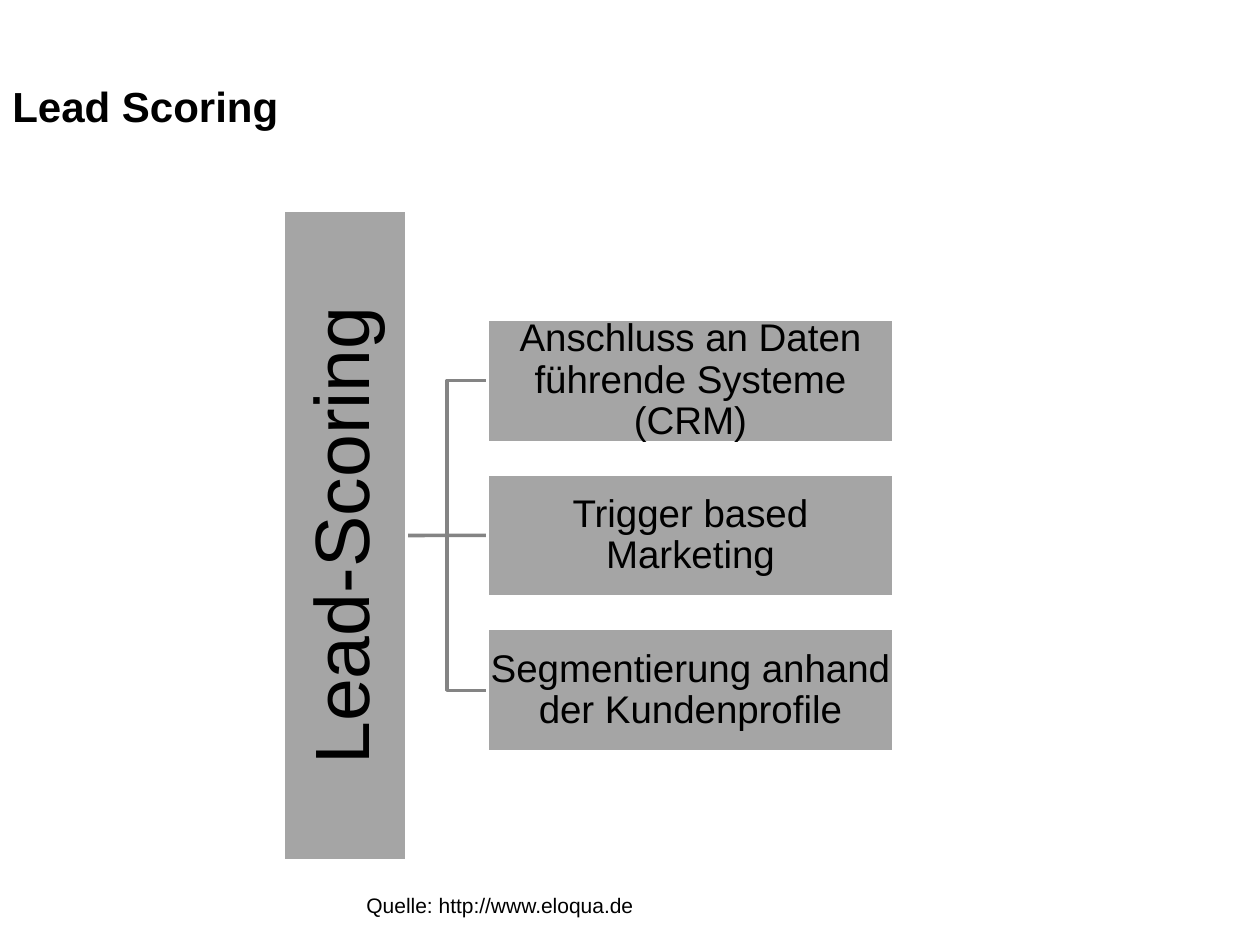
"""Build the Lead Scoring slide: a vertical root bar branching to three boxes."""
from lxml.etree import SubElement
from pptx import Presentation
from pptx.dml.color import RGBColor
from pptx.enum.shapes import MSO_CONNECTOR, MSO_SHAPE
from pptx.enum.text import MSO_ANCHOR, MSO_AUTO_SIZE, PP_ALIGN
from pptx.oxml.ns import qn
from pptx.util import Pt


def color(value):
    return RGBColor.from_string(value)


def write(shape, text, size, frame_format, paragraph_format, bold=False):
    frame = shape.text_frame
    for name, value in frame_format.items():
        setattr(frame, name, value)
    paragraph = frame.paragraphs[0]
    paragraph.text = text
    for name, value in paragraph_format.items():
        setattr(paragraph, name, value)
    for name, value in {"name": "Arial", "size": Pt(size), "bold": bold}.items():
        setattr(paragraph.font, name, value)
    paragraph.font.color.rgb = color("000000")


presentation = Presentation()
presentation.slide_width, presentation.slide_height = Pt(720), Pt(540)
slide = presentation.slides.add_slide(presentation.slide_layouts[6])
shapes = slide.shapes

title = shapes.add_textbox(Pt(0), Pt(42.5), Pt(490), Pt(36))
write(title, "Lead Scoring", 24, {
    "word_wrap": True,
    "auto_size": MSO_AUTO_SIZE.SHAPE_TO_FIT_TEXT,
    "vertical_anchor": MSO_ANCHOR.MIDDLE,
}, {}, bold=True)

source = shapes.add_textbox(Pt(202.3), Pt(506.2), Pt(168.5), Pt(21.8))
write(source, "Quelle: http://www.eloqua.de", 12, {
    "word_wrap": False,
    "auto_size": MSO_AUTO_SIZE.SHAPE_TO_FIT_TEXT,
}, {})

middle, pitch, thickness = 306, 88.5, 70.6
root_length, root_center = 372, 197
root_right = root_center + thickness / 2
branch_left, branch_width = 278.6, 232
elbow = (root_right + branch_left) / 2
branches = [
    "Anschluss an Daten führende Systeme (CRM)",
    "Trigger based Marketing",
    "Segmentierung anhand der Kundenprofile",
]

lines = []
for offset in (pitch, -pitch):
    builder = shapes.build_freeform(Pt(root_right), Pt(middle))
    builder.add_line_segments([
        (Pt(elbow), Pt(middle)),
        (Pt(elbow), Pt(middle + offset)),
        (Pt(branch_left), Pt(middle + offset)),
    ], close=False)
    bracket = builder.convert_to_shape()
    bracket.shadow.inherit = False
    bracket.fill.background()
    lines.append(bracket)

connector = shapes.add_connector(
    MSO_CONNECTOR.STRAIGHT, Pt(root_right), Pt(middle), Pt(branch_left), Pt(middle))
SubElement(connector._element.spPr, qn("a:effectLst"))
lines.append(connector)
for line_shape in lines:
    line_shape.line.color.rgb = color("848484")
    line_shape.line.width = Pt(2)

boxes = [("Lead-Scoring", 44, root_center, middle, root_length, 270, 2.2)]
for index, label in enumerate(branches):
    boxes.append((label, 22, branch_left + branch_width / 2,
                  middle + (index - 1) * pitch, branch_width, 0, 1.1))

rectangles = []
for label, size, center_x, center_y, width, rotation, inset in boxes:
    rectangle = shapes.add_shape(
        MSO_SHAPE.RECTANGLE, Pt(center_x - width / 2), Pt(center_y - thickness / 2),
        Pt(width), Pt(thickness))
    rectangle.rotation = rotation
    rectangle.shadow.inherit = False
    rectangle.fill.solid()
    rectangle.fill.fore_color.rgb = color("A5A5A5")
    rectangle.line.color.rgb = color("FFFFFF")
    rectangle.line.width = Pt(2)
    frame_format = {f"margin_{side}": Pt(inset) for side in ("left", "top", "right", "bottom")}
    frame_format.update(word_wrap=True, vertical_anchor=MSO_ANCHOR.MIDDLE)
    write(rectangle, label, size, frame_format,
          {"alignment": PP_ALIGN.CENTER, "line_spacing": 0.9})
    rectangles.append(rectangle)

root, _, trigger, _ = rectangles
connector.begin_connect(root, 2)
connector.end_connect(trigger, 1)
connector.begin_x, connector.begin_y = Pt(root_right), Pt(middle)

presentation.save("out.pptx")
